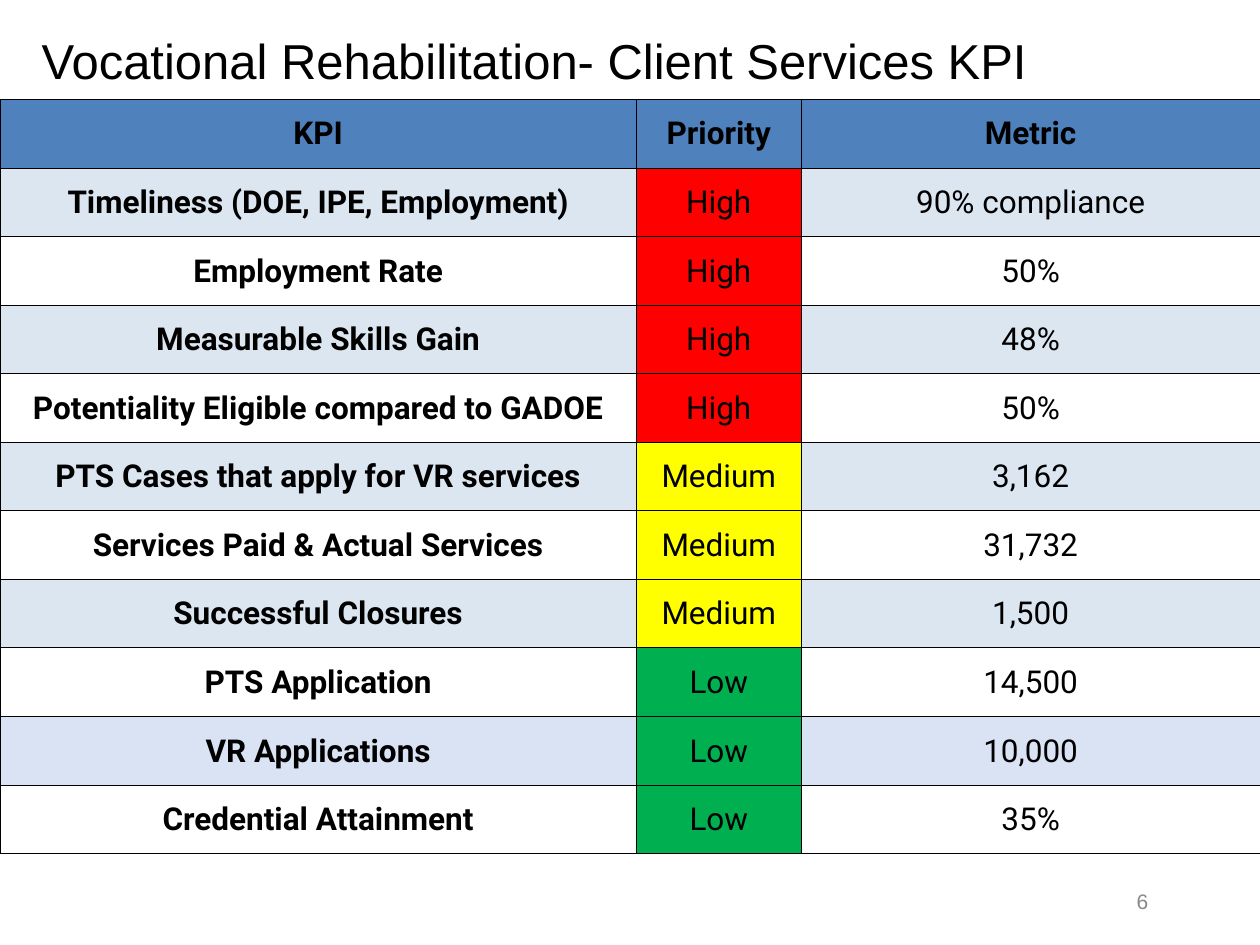
import dataclasses
import typing

import pptx
import pptx.dml.color
import pptx.enum.text
import pptx.oxml
import pptx.oxml.ns
import pptx.util

Pt = pptx.util.Pt
Align = pptx.enum.text.PP_ALIGN
Anchor = pptx.enum.text.MSO_ANCHOR


@dataclasses.dataclass(frozen=True)
class Theme:
    title_font: str = "Arial"
    table_font: str = "Roboto"
    title_size: float = 28
    table_size: float = 18
    page_size: float = 12
    ink: str = "000000"
    gray: str = "888888"
    head: str = "4F81BD"
    band: str = "DCE6F1"
    lilac: str = "DAE3F3"
    rule: float = 0.5


THEME = Theme()
LEVELS = {"High": "FF0000", "Medium": "FFFF00", "Low": "00B050"}


class Row(typing.NamedTuple):
    kpi: str
    level: str
    metric: str
    fill: typing.Optional[str] = None


HEAD = Row("KPI", "Priority", "Metric", THEME.head)
ROWS = [
    Row("Timeliness (DOE, IPE, Employment)", "High", "90% compliance", THEME.band),
    Row("Employment Rate", "High", "50%"),
    Row("Measurable Skills Gain", "High", "48%", THEME.band),
    Row("Potentiality Eligible compared to GADOE", "High", "50%"),
    Row("PTS Cases that apply for VR services", "Medium", "3,162", THEME.band),
    Row("Services Paid & Actual Services", "Medium", "31,732"),
    Row("Successful Closures", "Medium", "1,500", THEME.band),
    Row("PTS Application", "Low", "14,500"),
    Row("VR Applications", "Low", "10,000", THEME.lilac),
    Row("Credential Attainment", "Low", "35%"),
]
WIDTHS = (363.6, 94.3, 262.1)
ROW_HEIGHT = 39.2


def style(par, name: str, size: float, color: str, align, bold: bool = False) -> None:
    par.alignment = align
    font = par.font
    font.name, font.size, font.bold = name, Pt(size), bold
    font.color.rgb = pptx.dml.color.RGBColor.from_string(color)


def clear_insets(frame) -> None:
    frame.margin_left = frame.margin_right = Pt(0)
    frame.margin_top = frame.margin_bottom = Pt(0)


def add_rules(cell) -> None:
    props = cell._tc.get_or_add_tcPr()
    for side in ("lnL", "lnR", "lnT", "lnB"):
        props.append(pptx.oxml.parse_xml(
            f'<a:{side} {pptx.oxml.ns.nsdecls("a")} w="{int(Pt(THEME.rule))}">'
            f'<a:solidFill><a:srgbClr val="{THEME.ink}"/></a:solidFill></a:{side}>'))


def draw_cell(cell, text: str, fill: typing.Optional[str], bold: bool) -> None:
    cell.text = text
    cell.vertical_anchor = Anchor.MIDDLE
    cell.margin_left = cell.margin_right = cell.margin_top = Pt(0.7)
    cell.margin_bottom = Pt(0)
    style(cell.text_frame.paragraphs[0], THEME.table_font, THEME.table_size,
          THEME.ink, Align.CENTER, bold)
    add_rules(cell)  # rules come before the fill in the cell's XML
    if fill:
        cell.fill.solid()
        cell.fill.fore_color.rgb = pptx.dml.color.RGBColor.from_string(fill)
    else:
        cell.fill.background()


def draw_title(slide, text: str) -> None:
    title = slide.shapes.title
    title.left, title.top, title.width, title.height = Pt(23.8), Pt(17.3), Pt(651), Pt(34)
    frame = title.text_frame
    frame.text = text
    clear_insets(frame)
    frame.vertical_anchor = Anchor.TOP
    style(frame.paragraphs[0], THEME.title_font, THEME.title_size, THEME.ink, Align.LEFT)


def draw_table(slide, rows: typing.List[Row]) -> None:
    table = slide.shapes.add_table(
        len(rows), len(WIDTHS), Pt(0), Pt(56.8),
        Pt(sum(WIDTHS)), Pt(ROW_HEIGHT * len(rows))).table
    for col, width in zip(table.columns, WIDTHS):
        col.width = Pt(width)
    for i, row in enumerate(rows):
        table.rows[i].height = Pt(ROW_HEIGHT)
        head = i == 0
        draw_cell(table.cell(i, 0), row.kpi, row.fill, True)
        draw_cell(table.cell(i, 1), row.level, LEVELS.get(row.level, row.fill), head)
        draw_cell(table.cell(i, 2), row.metric, row.fill, head)


def draw_page(slide, text: str) -> None:
    box = slide.shapes.add_textbox(Pt(649.5), Pt(507.6), Pt(17), Pt(15))
    frame = box.text_frame
    frame.word_wrap = True
    clear_insets(frame)
    frame.text = text
    par = frame.paragraphs[0]
    par.line_spacing = Pt(14.3)
    style(par, THEME.title_font, THEME.page_size, THEME.gray, Align.LEFT)


def main() -> None:
    deck = pptx.Presentation()
    deck.slide_width, deck.slide_height = Pt(720), Pt(540)
    slide = deck.slides.add_slide(deck.slide_layouts[5])  # title only
    draw_title(slide, "Vocational Rehabilitation- Client Services KPI")
    draw_table(slide, [HEAD] + ROWS)
    draw_page(slide, "6")
    deck.save("out.pptx")


if __name__ == "__main__":
    main()
